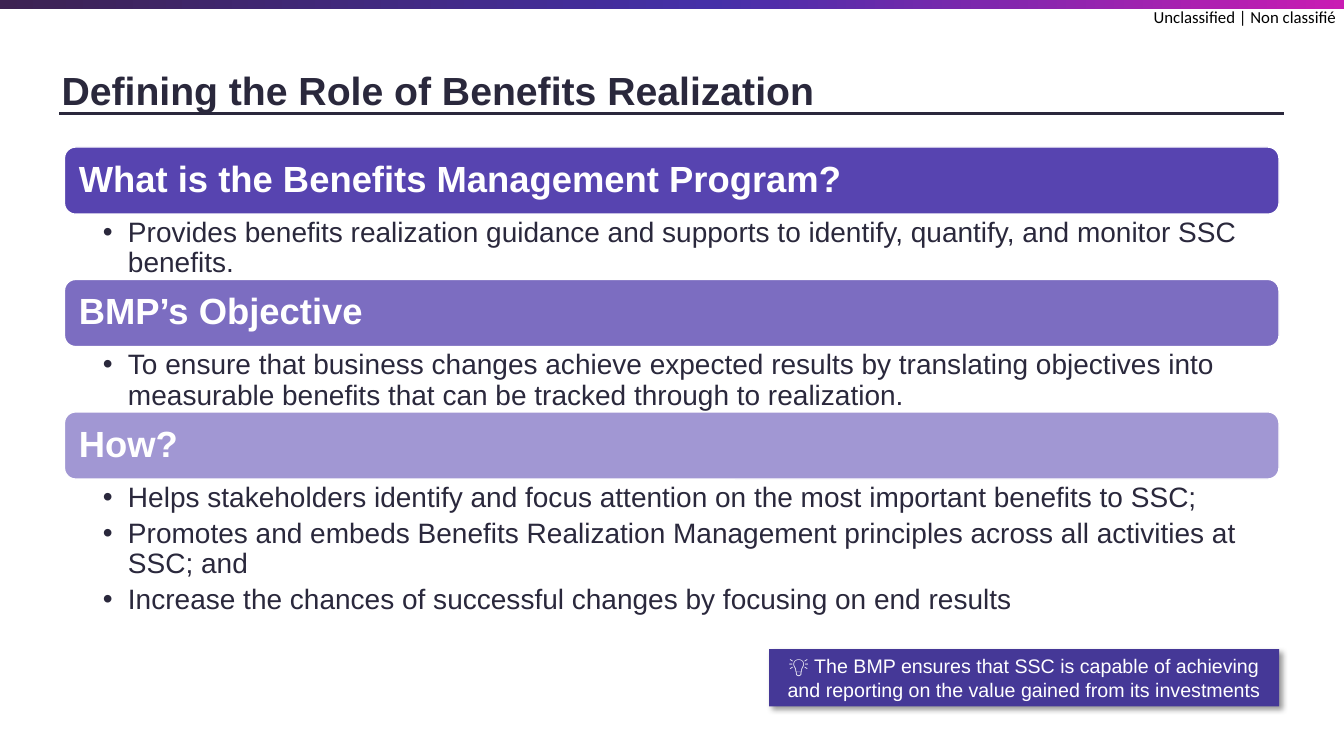
from copy import deepcopy
from dataclasses import dataclass

from lxml import etree
from pptx import Presentation
from pptx.dml.color import RGBColor
from pptx.enum import shapes, text
from pptx.oxml.ns import qn
from pptx.util import Pt

# Content
TITLE = "Defining the Role of Benefits Realization"
CLASSIFICATION = "Unclassified | Non classifié"
CALLOUT = ("💡 The BMP ensures that SSC is capable of achieving and reporting "
           "on the value gained from its investments")
# Heading, band opacity in percent, list height, list placeholder, bullets
SECTIONS = [
    ("What is the Benefits Management Program?", 90, 46.6, 2, [
        "Provides benefits realization guidance and supports to identify, "
        "quantify, and monitor SSC benefits."]),
    ("BMP’s Objective", 70, 46.6, 4, [
        "To ensure that business changes achieve expected results by translating "
        "objectives into measurable benefits that can be tracked through to realization."]),
    ("How?", 50, 97, 1, [
        "Helps stakeholders identify and focus attention on the most important benefits to SSC;",
        "Promotes and embeds Benefits Realization Management principles "
        "across all activities at SSC; and",
        "Increase the chances of successful changes by focusing on end results"]),
]
UNUSED_PLACEHOLDER = 3


@dataclass(frozen=True)
class Theme:
    font: str = "Arial"
    label_font: str = "Calibri"
    ink: str = "2A283C"
    white: str = "FFFFFF"
    black: str = "000000"
    band: str = "4530A8"
    callout: str = "453897"
    stripe: tuple = ((0, "3D2252"), (0.53, "4530A8"), (1, "C91CB3"))
    title_size: int = 28
    heading_size: int = 26
    list_size: int = 20
    callout_size: int = 14
    label_size: int = 12


theme = Theme()

# Layout, in points
SLIDE_WIDTH, SLIDE_HEIGHT = 960, 540
LEFT, WIDTH = 46, 867.6
BANDS_TOP, BAND_HEIGHT = 105, 48
BULLET_INDENT = 18


def place(shape, left, top, width, height):
    shape.left, shape.top, shape.width, shape.height = map(Pt, (left, top, width, height))


def set_frame(shape, insets, anchor):
    frame = shape.text_frame
    frame.word_wrap = True
    frame.auto_size = text.MSO_AUTO_SIZE.NONE
    frame.vertical_anchor = anchor
    (frame.margin_left, frame.margin_top,
     frame.margin_right, frame.margin_bottom) = map(Pt, insets)
    return frame


def style(paragraph, size, color, bold=False, font=theme.font,
          align=text.PP_ALIGN.LEFT, spacing=1.0, after=0):
    paragraph.font.name, paragraph.font.size, paragraph.font.bold = font, Pt(size), bold
    paragraph.font.color.rgb = RGBColor.from_string(color)
    paragraph.alignment, paragraph.line_spacing = align, spacing
    paragraph.space_before, paragraph.space_after = Pt(0), Pt(after)


def add_box(kind, left, top, width, height, color=None):
    shape = slide.shapes.add_shape(kind, *map(Pt, (left, top, width, height)))
    shape.shadow.inherit = False
    shape.line.fill.background()
    if color:
        shape.fill.solid()
        shape.fill.fore_color.rgb = RGBColor.from_string(color)
    return shape


def add_bullet(paragraph):
    properties = paragraph._p.get_or_add_pPr()
    properties.set("marL", str(Pt(BULLET_INDENT)))
    properties.set("indent", str(-Pt(BULLET_INDENT)))
    etree.SubElement(properties, qn("a:buFont"), typeface=theme.font)
    etree.SubElement(properties, qn("a:buChar"), char="•")


presentation = Presentation()
presentation.slide_width, presentation.slide_height = Pt(SLIDE_WIDTH), Pt(SLIDE_HEIGHT)
slide = presentation.slides.add_slide(presentation.slide_layouts.get_by_name("Comparison"))
unused = slide.placeholders[UNUSED_PLACEHOLDER]._element
unused.getparent().remove(unused)

# Gradient stripe along the top edge
stripe = add_box(shapes.MSO_SHAPE.RECTANGLE, 0, 0, SLIDE_WIDTH, 6.5)
stripe.fill.gradient()
stripe.fill.gradient_angle = 0
stop_list = stripe._element.spPr.find(qn("a:gradFill")).find(qn("a:gsLst"))
stop_list.append(deepcopy(stop_list[0]))
for stop, (position, color) in zip(stripe.fill.gradient_stops, theme.stripe):
    stop.position = position
    stop.color.rgb = RGBColor.from_string(color)

# Classification label
label = slide.shapes.add_textbox(*map(Pt, (824, 5, 134, 14.6)))
frame = set_frame(label, (0, 0, 0, 0), text.MSO_ANCHOR.TOP)
frame.text = CLASSIFICATION
style(frame.paragraphs[0], theme.label_size, theme.black, font=theme.label_font)

# Title and its rule
title = slide.shapes.title
place(title, 44, 41, 870, 40)
frame = set_frame(title, (0, 0, 0, 0), text.MSO_ANCHOR.BOTTOM)
frame.text = TITLE
style(frame.paragraphs[0], theme.title_size, theme.ink, bold=True, spacing=1.2)
rule = slide.shapes.add_connector(shapes.MSO_CONNECTOR.STRAIGHT,
                                  *map(Pt, (42.5, 81.2, 917, 81.2)))
rule.line.color.rgb = RGBColor.from_string(theme.ink)
rule.line.width = Pt(2.25)
etree.SubElement(rule._element.spPr, qn("a:effectLst"))

# Heading bands, each followed by its list
top = BANDS_TOP
for heading, opacity, list_height, placeholder, bullets in SECTIONS:
    band = add_box(shapes.MSO_SHAPE.ROUNDED_RECTANGLE, LEFT, top, WIDTH, BAND_HEIGHT, theme.band)
    band_color = band._element.spPr.find(qn("a:solidFill"))[0]
    etree.SubElement(band_color, qn("a:alpha"), val=str(opacity * 1000))
    band.line.color.rgb = RGBColor.from_string(theme.white)
    band.line.width = Pt(1)
    frame = set_frame(band, (8, 5, 8, 5), text.MSO_ANCHOR.MIDDLE)
    frame.text = heading
    style(frame.paragraphs[0], theme.heading_size, theme.white, bold=True, spacing=0.9)
    top += BAND_HEIGHT

    body = slide.placeholders[placeholder]
    place(body, LEFT, top, WIDTH, list_height)
    frame = set_frame(body, (27.4, 2.9, 14.4, 2.9), text.MSO_ANCHOR.TOP)
    frame.text = "\n".join(bullets)
    for paragraph in frame.paragraphs:
        style(paragraph, theme.list_size, theme.ink, spacing=0.9, after=4)
        add_bullet(paragraph)
    top += list_height

# Callout with a soft shadow
callout = add_box(shapes.MSO_SHAPE.RECTANGLE, 549.4, 463.6, 364.3, 41, theme.callout)
frame = set_frame(callout, (7.2, 3.6, 7.2, 3.6), text.MSO_ANCHOR.TOP)
frame.text = CALLOUT
style(frame.paragraphs[0], theme.callout_size, theme.white, align=text.PP_ALIGN.CENTER)
effects = callout._element.spPr.find(qn("a:effectLst"))
shadow = etree.SubElement(effects, qn("a:outerShdw"), blurRad=str(Pt(4)), dist=str(Pt(3)),
                          dir=str(45 * 60000), algn="tl", rotWithShape="0")
shadow_color = etree.SubElement(shadow, qn("a:srgbClr"), val=theme.black)
etree.SubElement(shadow_color, qn("a:alpha"), val=str(40 * 1000))

presentation.save("out.pptx")
